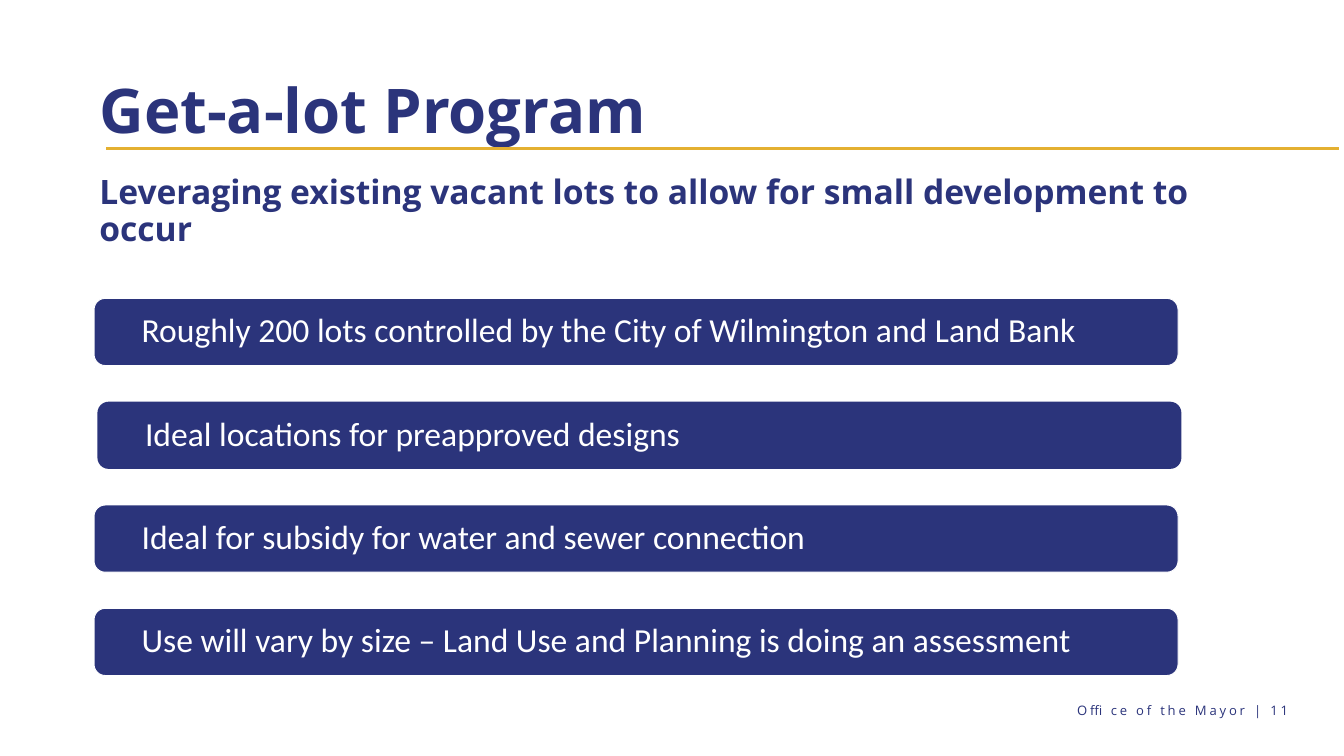
"""Build the Get-a-lot Program slide."""
from dataclasses import dataclass

from pptx import Presentation, util as u
from pptx.dml.color import RGBColor
from pptx.enum import shapes, text
from pptx.oxml.ns import qn
from lxml import etree

COLOURS = {"navy": "2B347B", "gold": "E4B031", "white": "FFFFFF"}
BAR_LEFT, BAR_TOP, BAR_PITCH = 100.8, 319.7, 110.7
BAR_WIDTH, BAR_HEIGHT, BAR_INSET = 1161.4, 72, 47.5


@dataclass(frozen=True)
class Point:
    wording: str
    shift: float = 0
    outlined: bool = True


POINTS = [
    Point("Roughly 200 lots controlled by the City of Wilmington and Land Bank"),
    Point("Ideal locations for preapproved designs", shift=3.6, outlined=False),
    Point("Ideal for subsidy for water and sewer connection"),
    Point("Use will vary by size – Land Use and Planning is doing an assessment"),
]


def colour(key: str) -> RGBColor:
    return RGBColor.from_string(COLOURS[key])


def apply(target, formats: dict) -> None:
    for attribute, value in formats.items():
        setattr(target, attribute, value)


def place(shape, left: float, top: float, width: float, height: float) -> None:
    apply(shape, {"left": u.Pt(left), "top": u.Pt(top),
                  "width": u.Pt(width), "height": u.Pt(height)})


def write(shape, wording: str, font: dict, ink: str, frame: dict,
          paragraph: dict):
    apply(shape.text_frame, {"word_wrap": True, **frame})
    line = shape.text_frame.paragraphs[0]
    apply(line, paragraph)
    run = line.add_run()
    run.text = wording
    apply(run.font, font)
    run.font.color.rgb = colour(ink)
    return run


def draw_bar(slide, index: int, point: Point) -> None:
    bar = slide.shapes.add_shape(
        shapes.MSO_SHAPE.ROUNDED_RECTANGLE,
        u.Pt(BAR_LEFT + point.shift), u.Pt(BAR_TOP + index * BAR_PITCH),
        u.Pt(BAR_WIDTH), u.Pt(BAR_HEIGHT))
    bar.shadow.inherit = False
    bar.fill.solid()
    bar.fill.fore_color.rgb = colour("navy")
    if point.outlined:
        bar.line.color.rgb = colour("white")
        bar.line.width = u.Pt(1)
    else:
        bar.line.fill.background()
    write(bar, point.wording, {"name": "Calibri", "size": u.Pt(36)}, "white",
          {"vertical_anchor": text.MSO_ANCHOR.MIDDLE,
           "margin_left": u.Pt(BAR_INSET), "margin_right": u.Pt(BAR_INSET),
           "margin_top": 0, "margin_bottom": 0},
          {"alignment": text.PP_ALIGN.LEFT, "line_spacing": 0.9})


def draw_rule(slide) -> None:
    rule = slide.shapes.add_connector(
        shapes.MSO_CONNECTOR.STRAIGHT,
        u.Pt(113.8), u.Pt(159.1), u.Pt(1434.2), u.Pt(159.1))
    rule.line.color.rgb = colour("gold")
    rule.line.width = u.Pt(4)
    etree.SubElement(rule._element.spPr, qn("a:effectLst"))


def main() -> None:
    deck = Presentation()
    apply(deck, {"slide_width": u.Pt(1440), "slide_height": u.Pt(810)})
    slide = deck.slides.add_slide(deck.slide_layouts.get_by_name("Title Only"))
    heading = {"name": "Open Sans", "bold": True}
    left_aligned = {"alignment": text.PP_ALIGN.LEFT, "line_spacing": 0.9}

    program = slide.shapes.title
    place(program, 99.4, 43.2, 1242, 156.2)
    write(program, "Get-a-lot Program", {**heading, "size": u.Pt(66)}, "navy",
          {"vertical_anchor": text.MSO_ANCHOR.MIDDLE,
           "auto_size": text.MSO_AUTO_SIZE.NONE}, left_aligned)

    purpose = slide.shapes.add_textbox(u.Pt(99.4), u.Pt(185), u.Pt(1242), u.Pt(100))
    write(purpose,
          "Leveraging existing vacant lots to allow for small development to occur",
          {**heading, "size": u.Pt(36)}, "navy", {}, left_aligned)

    office = slide.shapes.add_textbox(u.Pt(1068.5), u.Pt(753.1), u.Pt(311.8), u.Pt(17.3))
    margins = dict.fromkeys(
        ("margin_left", "margin_right", "margin_top", "margin_bottom"), 0)
    credit = write(office, "Office of the Mayor | 11",
                   {"name": "Open Sans", "size": u.Pt(14)}, "navy", margins,
                   {"alignment": text.PP_ALIGN.RIGHT})
    credit.font._element.set("spc", "300")

    draw_rule(slide)
    for index, point in enumerate(POINTS):
        draw_bar(slide, index, point)
    deck.save("out.pptx")


if __name__ == "__main__":
    main()
